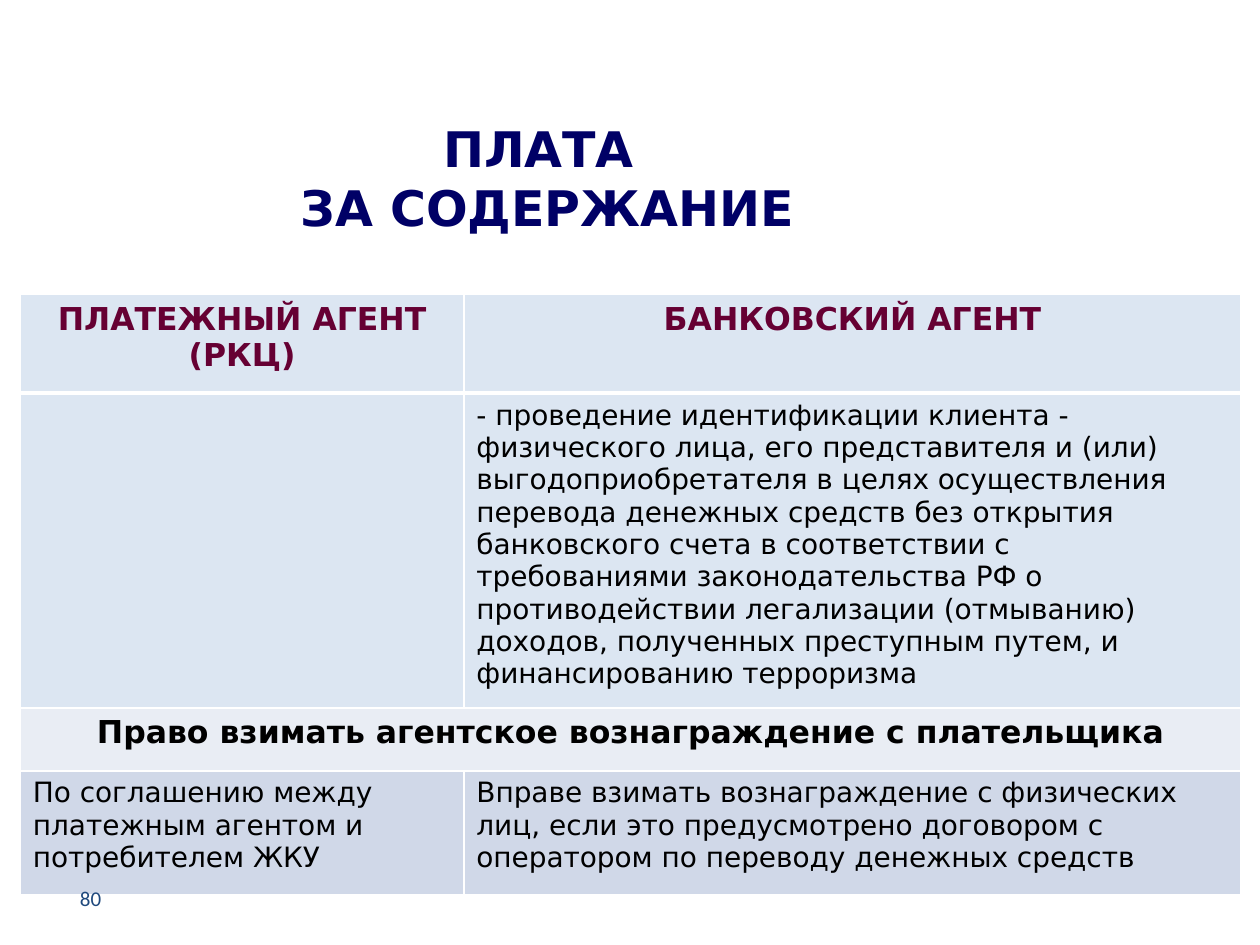
"""Build a slide comparing payment agents and bank agents."""
from lxml import etree
from pptx import Presentation
from pptx.dml.color import RGBColor
from pptx.enum.text import MSO_ANCHOR, PP_ALIGN
from pptx.oxml.ns import qn
from pptx.util import Cm, Pt

LEFT, CENTER, RIGHT = PP_ALIGN.LEFT, PP_ALIGN.CENTER, PP_ALIGN.RIGHT
MIDDLE = MSO_ANCHOR.MIDDLE

THEME = {
    "font": "DejaVu Sans", "number_font": "Calibri",
    "title": "000066", "heading": "660033", "body": "000000", "number": "1F497D",
    "border": "FFFFFF", "pale": "DCE6F2", "band": "E9EDF4", "deep": "D0D8E8",
    "title_size": 28, "heading_size": 18, "body_size": 16, "number_size": 12,
    "thin": 1, "thick": 3,
}

TITLE = "ПЛАТА \vЗА СОДЕРЖАНИЕ"
PAGE_NUMBER = "80"
HEADING = {"size": THEME["heading_size"], "bold": True, "align": CENTER}
BODY = {"size": THEME["body_size"]}
ROWS = [
    {"height": 1.98, "fill": "pale", "format": {**HEADING, "color": THEME["heading"]},
     "texts": ["ПЛАТЕЖНЫЙ АГЕНТ (РКЦ)", "БАНКОВСКИЙ АГЕНТ"]},
    {"height": 5.94, "fill": "pale", "format": BODY,
     "texts": ["", "- проведение идентификации клиента - физического лица, его "
               "представителя и (или) выгодоприобретателя в целях осуществления "
               "перевода денежных средств без открытия банковского счета в "
               "соответствии с требованиями законодательства РФ о противодействии "
               "легализации (отмыванию) доходов, полученных преступным путем, и "
               "финансированию терроризма"]},
    {"height": 1.27, "fill": "band", "format": HEADING,
     "texts": ["Право взимать агентское вознаграждение с плательщика"]},
    {"height": 2.49, "fill": "deep", "format": {**BODY, "after": 6},
     "texts": ["По соглашению между платежным агентом и потребителем ЖКУ",
               "Вправе взимать вознаграждение с физических лиц, если это "
               "предусмотрено договором с оператором по переводу денежных средств"]},
]
COLUMN_WIDTHS = [8.94, 15.67]
TABLE_LEFT, TABLE_TOP = 0.41, 5.94


def write(frame, text, size, color=THEME["body"], font=THEME["font"],
          bold=False, align=LEFT, after=0):
    """Write one formatted paragraph into a text frame."""
    para = frame.paragraphs[0]
    para.text = text
    para.alignment = align
    para.space_after = Pt(after)
    for span in para.runs:
        span.font.name = font
        span.font.size = Pt(size)
        span.font.bold = bold
        span.font.color.rgb = RGBColor.from_string(color)


def add_text(page, place, text, **style):
    """Add a wrapped text box with its text centred vertically."""
    box = page.shapes.add_textbox(*map(Cm, place))
    box.text_frame.word_wrap = True
    box.text_frame.vertical_anchor = MIDDLE
    write(box.text_frame, text, **style)


def set_borders(cell, **widths):
    """Draw solid borders of the given point widths around a cell."""
    properties = cell._tc.get_or_add_tcPr()
    for side, width in widths.items():
        line = etree.SubElement(properties, qn(f"a:ln{side}"), w=str(Pt(width)))
        fill = etree.SubElement(line, qn("a:solidFill"))
        etree.SubElement(fill, qn("a:srgbClr"), val=THEME["border"])


def add_comparison(page):
    """Add the table, merging each row that has a single text."""
    table = page.shapes.add_table(
        len(ROWS), len(COLUMN_WIDTHS), Cm(TABLE_LEFT), Cm(TABLE_TOP),
        Cm(sum(COLUMN_WIDTHS)), Cm(sum(row["height"] for row in ROWS))).table
    table.horz_banding = False
    for column, width in zip(table.columns, COLUMN_WIDTHS):
        column.width = Cm(width)
    thin, thick = THEME["thin"], THEME["thick"]
    for index, row in enumerate(ROWS):
        table.rows[index].height = Cm(row["height"])
        cells = list(table.rows[index].cells)
        for cell in cells:
            set_borders(cell, L=thin, R=thin, T=thick if index == 1 else thin,
                        B=thick if index == 0 else thin)
            cell.fill.solid()
            cell.fill.fore_color.rgb = RGBColor.from_string(THEME[row["fill"]])
        if len(row["texts"]) == 1:
            cells[0].merge(cells[-1])
        for cell, text in zip(cells, row["texts"]):
            write(cell.text_frame, text, **row["format"])


def main():
    """Build and save the deck."""
    deck = Presentation()
    deck.slide_width, deck.slide_height = Cm(25.4), Cm(19.05)
    page = deck.slides.add_slide(deck.slide_layouts[6])
    add_text(page, (5.77, 1.98, 10.52, 3.18), TITLE, size=THEME["title_size"],
             color=THEME["title"], bold=True, align=CENTER)
    add_comparison(page)
    add_text(page, (0.89, 17.6, 1.4, 1.02), PAGE_NUMBER, size=THEME["number_size"],
             color=THEME["number"], font=THEME["number_font"], align=RIGHT)
    deck.save("out.pptx")


if __name__ == "__main__":
    main()
